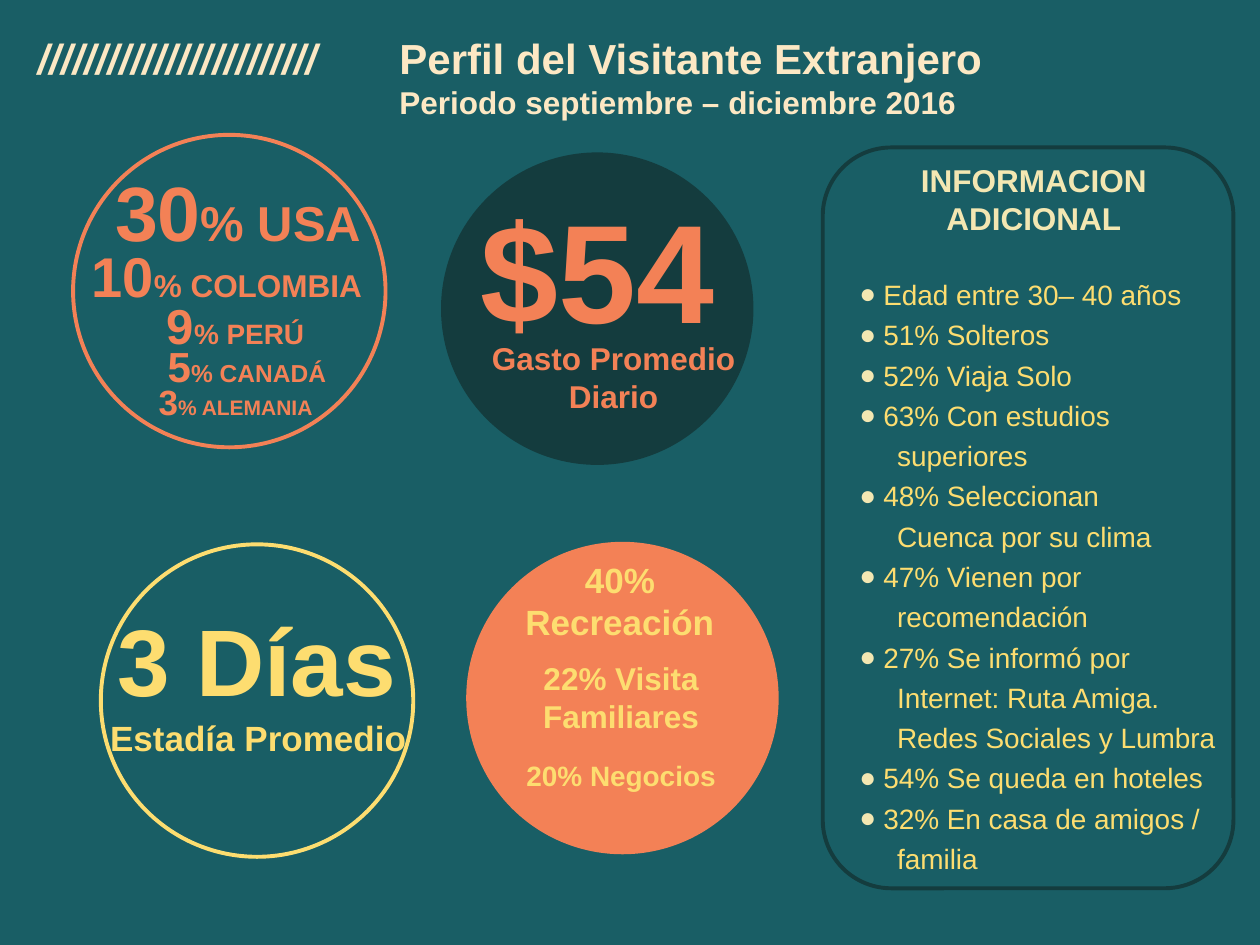
from lxml.etree import SubElement
from pptx import Presentation
from pptx.dml.color import RGBColor as Rgb
from pptx.enum.shapes import MSO_SHAPE as Kind
from pptx.enum.text import MSO_ANCHOR as Anchor, MSO_AUTO_SIZE as Fit, PP_ALIGN as Align
from pptx.oxml.ns import qn
from pptx.util import Inches, Pt

TEAL = Rgb(0x19, 0x5E, 0x65)
DARK = Rgb(0x14, 0x3C, 0x3E)
CORAL = Rgb(0xF3, 0x81, 0x56)
GOLD = Rgb(0xFD, 0xDD, 0x70)
CREAM = Rgb(0xFC, 0xE8, 0xC4)
SAND = Rgb(0xF3, 0xE7, 0xB2)

COLS, ROWS = 100, 75
DISC = 24.8  # circle size in columns
WIDE, SLIM = 26, 22  # widths of centred labels


class Deck:
    font = "Arial"
    edge = Pt(2.25)

    def __init__(self):
        self.prs = Presentation()
        self.prs.slide_width, self.prs.slide_height = Inches(10), Inches(7.5)
        self.slide = self.prs.slides.add_slide(self.prs.slide_layouts[1])
        back = self.slide.background.fill
        back.solid()
        back.fore_color.rgb = TEAL

    def grid(self, x, y, w, h):
        col, row = self.prs.slide_width / COLS, self.prs.slide_height / ROWS
        return [int(n) for n in (x * col, y * row, w * col, h * row)]

    def run(self, para, text, size, color, bold=True, italic=False):
        run = para.add_run()
        run.text = text
        font = run.font
        font.name, font.size, font.bold, font.italic = self.font, Pt(size), bold, italic
        font.color.rgb = color

    def frame(self, item):
        frame = item.text_frame
        frame.word_wrap = True
        frame.auto_size = Fit.NONE
        frame.vertical_anchor = Anchor.TOP
        return frame

    def place(self, item, box):
        item.left, item.top, item.width, item.height = self.grid(*box)
        return self.frame(item)

    def shape(self, kind, box, fill=None, line=None):
        item = self.slide.shapes.add_shape(kind, *self.grid(*box))
        item.shadow.inherit = False
        if fill:
            item.fill.solid()
            item.fill.fore_color.rgb = fill
        else:
            item.fill.background()
        if line:
            item.line.color.rgb = line
            item.line.width = self.edge
        else:
            item.line.fill.background()

    def disc(self, x, y, **style):
        self.shape(Kind.OVAL, (x, y, DISC, DISC), **style)

    def label(self, box, color, *runs, align=Align.CENTER, italic=False):
        item = self.slide.shapes.add_textbox(*self.grid(*box))
        para = self.frame(item).paragraphs[0]
        para.alignment = align
        for text, size in runs:
            self.run(para, text, size, color, italic=italic)

    def title(self, box, color, *lines):
        frame = self.place(self.slide.shapes.title, box)
        for i, (text, size) in enumerate(lines):
            para = frame.add_paragraph() if i else frame.paragraphs[0]
            para.alignment = Align.LEFT
            self.run(para, text, size, color)

    def bullets(self, box, items, size, color, dot):
        """Each item is its lines; the first has a dot, the rest are indented."""
        frame = self.place(self.slide.placeholders[1], box)
        rows = [(i, text) for item in items for i, text in enumerate(item)]
        for n, (i, text) in enumerate(rows):
            para = frame.add_paragraph() if n else frame.paragraphs[0]
            para.line_spacing, para.space_before = 1.2, Pt(0)
            props = para._p.get_or_add_pPr()
            props.set("marL", str(Inches(0.3 if i else 0.19)))
            props.set("indent", str(0 if i else -Inches(0.19)))
            if i:
                SubElement(props, qn("a:buNone"))
            else:
                tint = SubElement(props, qn("a:buClr"))
                SubElement(tint, qn("a:srgbClr"), val=str(dot))
                SubElement(props, qn("a:buFont"), typeface=self.font)
                SubElement(props, qn("a:buChar"), char="●")
            self.run(para, text, size, color, bold=False)


def main():
    deck = Deck()

    # Header
    deck.label((2, 2.1, 27.8, 5.1), CREAM, ("/" * 24, 24), align=Align.LEFT, italic=True)
    deck.title((30.7, 2.1, 57.7, 8.1), CREAM,
               ("Perfil del Visitante Extranjero", 24),
               ("Periodo septiembre – diciembre 2016", 18))

    # Countries of origin
    deck.disc(5.8, 10.7, line=CORAL)
    lands = [
        (5.9, 12.6, 8.4, "30", 44, "% USA", 28),
        (5, 18.7, 6.4, "10", 32, "% COLOMBIA", 18),
        (5.7, 23, 5.7, "9", 28, "% PERÚ", 16),
        (6.6, 26.5, 5, "5", 24, "% CANADÁ", 14),
        (5.7, 29.7, 4.4, "3", 20, "% ALEMANIA", 12),
    ]
    for x, y, h, share, big, land, small in lands:
        deck.label((x, y, WIDE, h), CORAL, (share, big), (land, small))

    # Daily spending
    deck.disc(35, 12.1, fill=DARK)
    deck.label((36.4, 14.1, SLIM, 14.5), CORAL, ("$54", 80))
    deck.label((35.7, 26.4, WIDE, 7.1), CORAL, ("Gasto Promedio Diario", 18))

    # Length of stay
    deck.disc(8, 43.2, line=GOLD)
    deck.label((7.1, 47.3, 26.6, 10.1), GOLD, ("3 Días", 54))
    deck.label((7.5, 56.4, WIDE, 4.4), GOLD, ("Estadía Promedio", 20))

    # Reasons for the visit
    deck.disc(37, 43, fill=CORAL)
    deck.label((38.2, 43.8, SLIM, 7.7), GOLD, ("40% Recreación", 20))
    deck.label((38.3, 51.8, SLIM, 7.1), GOLD, ("22% Visita Familiares", 18))
    deck.label((38.3, 59.7, SLIM, 3.7), GOLD, ("20% Negocios", 16))

    # Further facts
    deck.shape(Kind.ROUNDED_RECTANGLE, (65.3, 11.7, 32.6, 58.8), line=DARK)
    deck.label((68.1, 12.3, 27.9, 7.1), SAND, ("INFORMACION ADICIONAL", 18))
    facts = [
        ["Edad entre 30– 40 años"],
        ["51% Solteros"],
        ["52% Viaja Solo"],
        ["63% Con estudios", "superiores"],
        ["48% Seleccionan", "Cuenca por su clima"],
        ["47% Vienen por", "recomendación"],
        ["27% Se informó por", "Internet: Ruta Amiga.", "Redes Sociales y Lumbra"],
        ["54% Se queda en hoteles"],
        ["32% En casa de amigos /", "familia"],
    ]
    deck.bullets((67.2, 21, 30.8, 49), facts, 16, GOLD, SAND)

    deck.prs.save("out.pptx")


if __name__ == "__main__":
    main()
